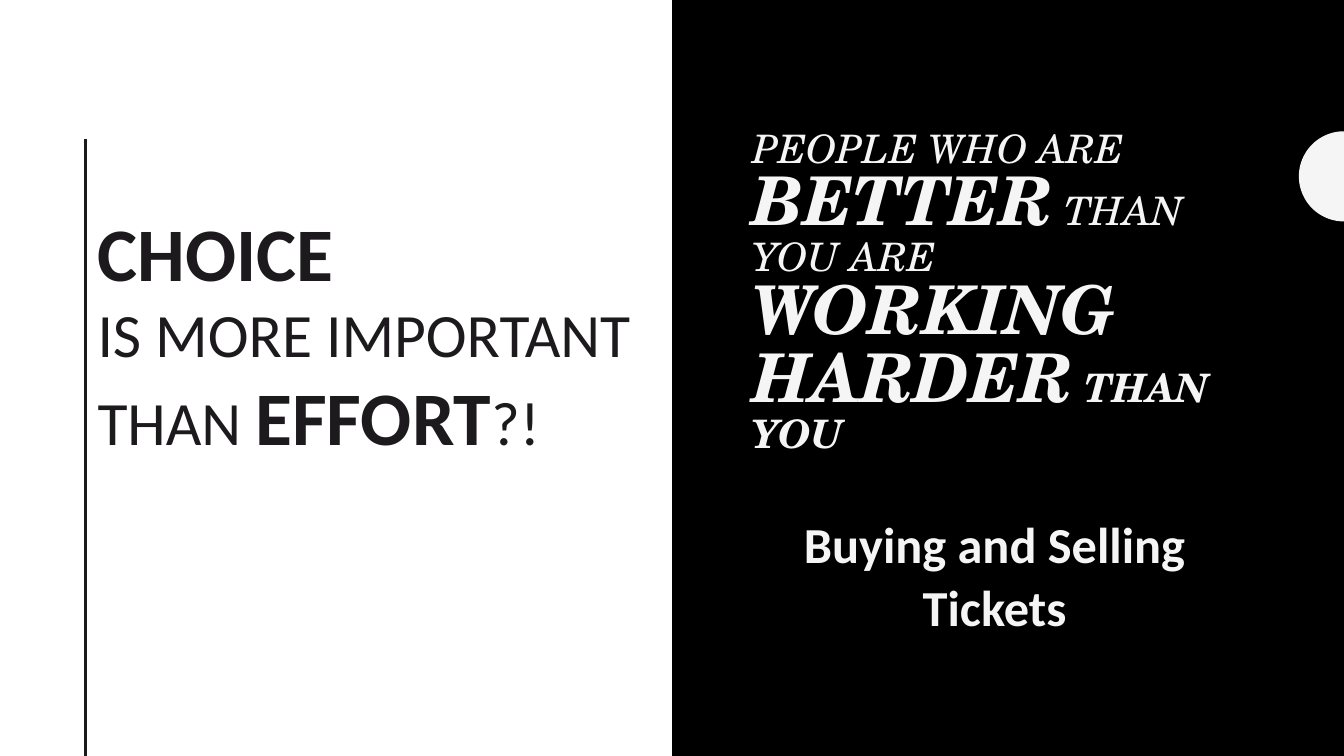
"""Build a split slide on choice versus effort and save it as out.pptx."""
from math import cos, pi, sin

from lxml.etree import SubElement
from pptx import Presentation
from pptx.dml.color import RGBColor
from pptx.enum.shapes import MSO_CONNECTOR, MSO_SHAPE
from pptx.enum.text import MSO_ANCHOR, MSO_AUTO_SIZE, PP_ALIGN
from pptx.oxml.ns import qn
from pptx.util import Pt

COLORS = {"black": "000000", "white": "FFFFFF", "ink": "1D1A1D", "light": "F5F5F5"}
SERIF = "TeX Gyre Schola"
SANS = "Calibri"


def add_run(paragraph, text, size, font=SANS, color="light", bold=False, italic=False):
    run = paragraph.add_run()
    run.text = text
    run.font.size = Pt(size)
    run.font.name = font
    run.font.bold = bold
    run.font.italic = italic
    run.font.color.rgb = RGBColor.from_string(COLORS[color])


def paint(shape, color):
    shape.shadow.inherit = False
    shape.fill.solid()
    shape.fill.fore_color.rgb = RGBColor.from_string(COLORS[color])
    shape.line.fill.background()


presentation = Presentation()
presentation.slide_width = Pt(960)
presentation.slide_height = Pt(540)
slide = presentation.slides.add_slide(presentation.slide_layouts[1])
title = slide.shapes.title
body = slide.placeholders[1]

for width, color in ((960, "black"), (480, "white")):
    panel = slide.shapes.add_shape(MSO_SHAPE.RECTANGLE, 0, 0, Pt(width), Pt(540))
    paint(panel, color)
    title.element.addprevious(panel.element)

for placeholder, left, top, width, height in (
    (title, 530, 90, 379, 288),
    (body, 512, 361, 397, 89),
):
    placeholder.left, placeholder.top = Pt(left), Pt(top)
    placeholder.width, placeholder.height = Pt(width), Pt(height)
    placeholder.text_frame.vertical_anchor = MSO_ANCHOR.TOP
    placeholder.text_frame.auto_size = MSO_AUTO_SIZE.NONE
    placeholder.text_frame.word_wrap = True

paragraph = title.text_frame.paragraphs[0]
paragraph.alignment = PP_ALIGN.LEFT
paragraph.line_spacing = 0.85
add_run(paragraph, "PEOPLE WHO ARE ", 28, SERIF, italic=True)
add_run(paragraph, "BETTER", 48, SERIF, bold=True, italic=True)
add_run(paragraph, " THAN YOU ARE ", 28, SERIF, italic=True)
paragraph.add_line_break()
add_run(paragraph, "WORKING HARDER", 48, SERIF, bold=True, italic=True)
add_run(paragraph, " THAN YOU", 28, SERIF, bold=True, italic=True)

body.text_frame.margin_left = body.text_frame.margin_right = Pt(12)
paragraph = body.text_frame.paragraphs[0]
paragraph.alignment = PP_ALIGN.CENTER
paragraph.line_spacing = 1.04
paragraph.space_before = Pt(0)
paragraph.space_after = Pt(6)
add_run(paragraph, "Buying and Selling Tickets", 36, bold=True)
properties = paragraph._p.get_or_add_pPr()
properties.set("marL", "0")
properties.set("indent", "0")
SubElement(properties, qn("a:buNone"))

rule = slide.shapes.add_connector(
    MSO_CONNECTOR.STRAIGHT, Pt(61), Pt(99.5), Pt(61), Pt(540)
)
rule.line.width = Pt(2)
rule.line.color.rgb = RGBColor.from_string(COLORS["ink"])
SubElement(rule.element.spPr, qn("a:effectLst"))

radius, center_x, center_y, steps = 32.2, 960, 126, 48
arc = [
    (
        Pt(center_x - radius * sin(pi * step / steps)),
        Pt(center_y - radius * cos(pi * step / steps)),
    )
    for step in range(steps + 1)
]
builder = slide.shapes.build_freeform(*arc[0])
builder.add_line_segments(arc[1:], close=True)
paint(builder.convert_to_shape(), "light")

slogan = slide.shapes.add_textbox(Pt(62.6), Pt(143.3), Pt(438), Pt(138))
slogan.text_frame.word_wrap = True
paragraph = slogan.text_frame.paragraphs[0]
add_run(paragraph, "CHOICE", 54, color="ink", bold=True)
paragraph = slogan.text_frame.add_paragraph()
add_run(paragraph, "IS MORE IMPORTANT THAN ", 44, color="ink")
add_run(paragraph, "EFFORT", 54, color="ink", bold=True)
add_run(paragraph, "?!", 44, color="ink")

presentation.save("out.pptx")
